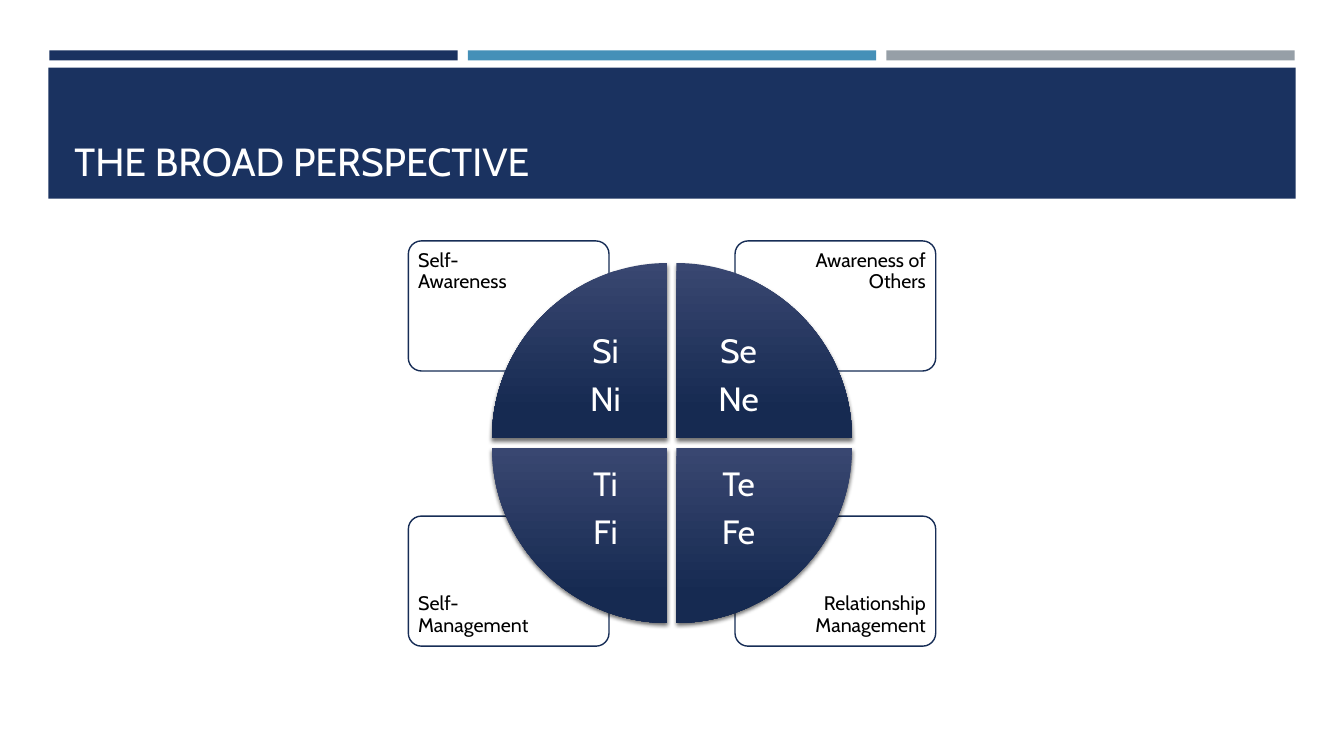
from dataclasses import dataclass

from lxml.etree import SubElement
from pptx import Presentation
from pptx.dml.color import RGBColor
from pptx.enum.shapes import MSO_SHAPE
from pptx.enum.text import MSO_ANCHOR, PP_ALIGN
from pptx.oxml.ns import qn
from pptx.shapes.autoshape import Shape
from pptx.slide import Slide
from pptx.text.text import TextFrame
from pptx.util import Inches, Pt


@dataclass(frozen=True)
class Theme:
    font: str = "Cabin"
    navy: RGBColor = RGBColor(0x1A, 0x32, 0x60)
    sky: RGBColor = RGBColor(0x45, 0x90, 0xB8)
    gray: RGBColor = RGBColor(0x96, 0x9F, 0xA7)
    outline: RGBColor = RGBColor(0x17, 0x2D, 0x56)
    gradient_top: RGBColor = RGBColor(0x39, 0x47, 0x71)
    gradient_bottom: RGBColor = RGBColor(0x16, 0x2A, 0x51)
    white: RGBColor = RGBColor(0xFF, 0xFF, 0xFF)
    black: RGBColor = RGBColor(0, 0, 0)
    title_size: int = 28
    function_size: int = 24
    domain_size: int = 14


@dataclass(frozen=True)
class Quadrant:
    domain: str
    functions: tuple[str, str]
    column: int
    row: int


THEME = Theme()
QUADRANTS = (
    Quadrant("Relationship Management", ("Te", "Fe"), 1, 1),
    Quadrant("Self-Management", ("Ti", "Fi"), 0, 1),
    Quadrant("Awareness of Others", ("Se", "Ne"), 1, 0),
    Quadrant("Self-Awareness", ("Si", "Ni"), 0, 0),
)
CARD_LEFT, CARD_TOP = 4.05, 2.39
CARD_WIDTH, CARD_HEIGHT = 1.99, 1.29
CARD_STEP_X, CARD_STEP_Y = 3.24, 2.73
WEDGE_LEFT, WEDGE_TOP = 4.88, 2.61
RADIUS, WEDGE_STEP = 1.74, 1.83
ARC_HANDLE = 0.55


def write_lines(frame: TextFrame, lines: tuple[str, ...], size: int, color: RGBColor,
                align: PP_ALIGN, anchor: MSO_ANCHOR, space_share: float) -> None:
    frame.word_wrap = True
    frame.vertical_anchor = anchor
    for index, line in enumerate(lines):
        paragraph = frame.add_paragraph() if index else frame.paragraphs[0]
        paragraph.text = line
        paragraph.alignment = align
        paragraph.line_spacing = 0.9
        paragraph.space_after = Pt(size * space_share)
        paragraph.font.name = THEME.font
        paragraph.font.size = Pt(size)
        paragraph.font.color.rgb = color


def set_margins(frame: TextFrame, quadrant: Quadrant, left: float, top: float,
                right: float, bottom: float) -> None:
    if quadrant.column:
        left, right = right, left
    if quadrant.row:
        top, bottom = bottom, top
    frame.margin_left, frame.margin_top = Inches(left), Inches(top)
    frame.margin_right, frame.margin_bottom = Inches(right), Inches(bottom)


def add_band(slide: Slide, left: float, top: float, width: float, height: float,
             color: RGBColor) -> None:
    band = slide.shapes.add_shape(MSO_SHAPE.RECTANGLE, Inches(left), Inches(top),
                                  Inches(width), Inches(height))
    band.shadow.inherit = False
    band.fill.solid()
    band.fill.fore_color.rgb = color
    band.line.fill.background()


def add_title(slide: Slide, text: str) -> None:
    title = slide.shapes.add_textbox(Inches(0.64), Inches(0.77), Inches(12.06), Inches(1.11))
    write_lines(title.text_frame, (text,), THEME.title_size, THEME.white,
                PP_ALIGN.LEFT, MSO_ANCHOR.BOTTOM, 0)


def add_card(slide: Slide, quadrant: Quadrant) -> None:
    card = slide.shapes.add_shape(MSO_SHAPE.ROUNDED_RECTANGLE,
                                  Inches(CARD_LEFT + quadrant.column * CARD_STEP_X),
                                  Inches(CARD_TOP + quadrant.row * CARD_STEP_Y),
                                  Inches(CARD_WIDTH), Inches(CARD_HEIGHT))
    card.adjustments[0] = 0.1
    card.shadow.inherit = False
    card.fill.solid()
    card.fill.fore_color.rgb = THEME.white
    fill_color = card._element.spPr.find(qn("a:solidFill")).find(qn("a:srgbClr"))
    SubElement(fill_color, qn("a:alpha"), val="90000")
    card.line.color.rgb = THEME.outline
    card.line.width = Pt(1)
    set_margins(card.text_frame, quadrant, 0.06, 0.06, 0.66, 0.39)
    write_lines(card.text_frame, (quadrant.domain,), THEME.domain_size, THEME.black,
                PP_ALIGN.RIGHT if quadrant.column else PP_ALIGN.LEFT,
                MSO_ANCHOR.BOTTOM if quadrant.row else MSO_ANCHOR.TOP, 0.15)


def add_soft_shadow(shape: Shape) -> None:
    shape.shadow.inherit = False
    effects = shape._element.spPr.find(qn("a:effectLst"))
    shadow = SubElement(effects, qn("a:outerShdw"), blurRad=str(Pt(3)), dist=str(Pt(2)),
                        dir="5400000", rotWithShape="0")
    color = SubElement(shadow, qn("a:srgbClr"), val=str(THEME.black))
    SubElement(color, qn("a:alpha"), val="55000")


def draw_quarter(slide: Slide, quadrant: Quadrant) -> Shape:
    left = WEDGE_LEFT + quadrant.column * WEDGE_STEP
    top = WEDGE_TOP + quadrant.row * WEDGE_STEP

    def locate(across: float, down: float) -> tuple[int, int]:
        x = across if quadrant.column else 1 - across
        y = down if quadrant.row else 1 - down
        return Inches(x * RADIUS), Inches(y * RADIUS)

    def place(across: float, down: float) -> tuple[int, int]:
        x, y = locate(across, down)
        return Inches(left) + x, Inches(top) + y

    outline = slide.shapes.build_freeform(*place(0, 0))
    outline.add_line_segments([place(1, 0), place(0, 1)], close=True)
    quarter = outline.convert_to_shape()
    chord = list(quarter._element.iter(qn("a:lnTo")))[1]
    contour = chord.getparent()
    arc = SubElement(contour, qn("a:cubicBezTo"))
    for x, y in (locate(1, ARC_HANDLE), locate(ARC_HANDLE, 1), locate(0, 1)):
        SubElement(arc, qn("a:pt"), x=str(x), y=str(y))
    contour.replace(chord, arc)
    return quarter


def add_wedge(slide: Slide, quadrant: Quadrant) -> None:
    wedge = draw_quarter(slide, quadrant)
    wedge.fill.gradient()
    wedge.fill.gradient_angle = 270
    stops = ((0, THEME.gradient_top), (0.84, THEME.gradient_bottom))
    for stop, (position, color) in zip(wedge.fill.gradient_stops, stops):
        stop.position = position
        stop.color.rgb = color
    wedge.line.fill.background()
    add_soft_shadow(wedge)
    set_margins(wedge.text_frame, quadrant, 0.7, 0.7, 0.19, 0.19)
    write_lines(wedge.text_frame, quadrant.functions, THEME.function_size, THEME.white,
                PP_ALIGN.CENTER, MSO_ANCHOR.MIDDLE, 0.35)


def main() -> None:
    presentation = Presentation()
    presentation.slide_width, presentation.slide_height = Inches(13.33), Inches(7.5)
    slide = presentation.slides.add_slide(presentation.slide_layouts[6])
    for index, color in enumerate((THEME.navy, THEME.sky, THEME.gray)):
        add_band(slide, 0.49 + index * 4.15, 0.5, 4.05, 0.1, color)
    add_band(slide, 0.48, 0.67, 12.37, 1.3, THEME.navy)
    add_title(slide, "THE BROAD PERSPECTIVE")
    for quadrant in QUADRANTS:
        add_card(slide, quadrant)
    for quadrant in QUADRANTS:
        add_wedge(slide, quadrant)
    presentation.save("out.pptx")


if __name__ == "__main__":
    main()
